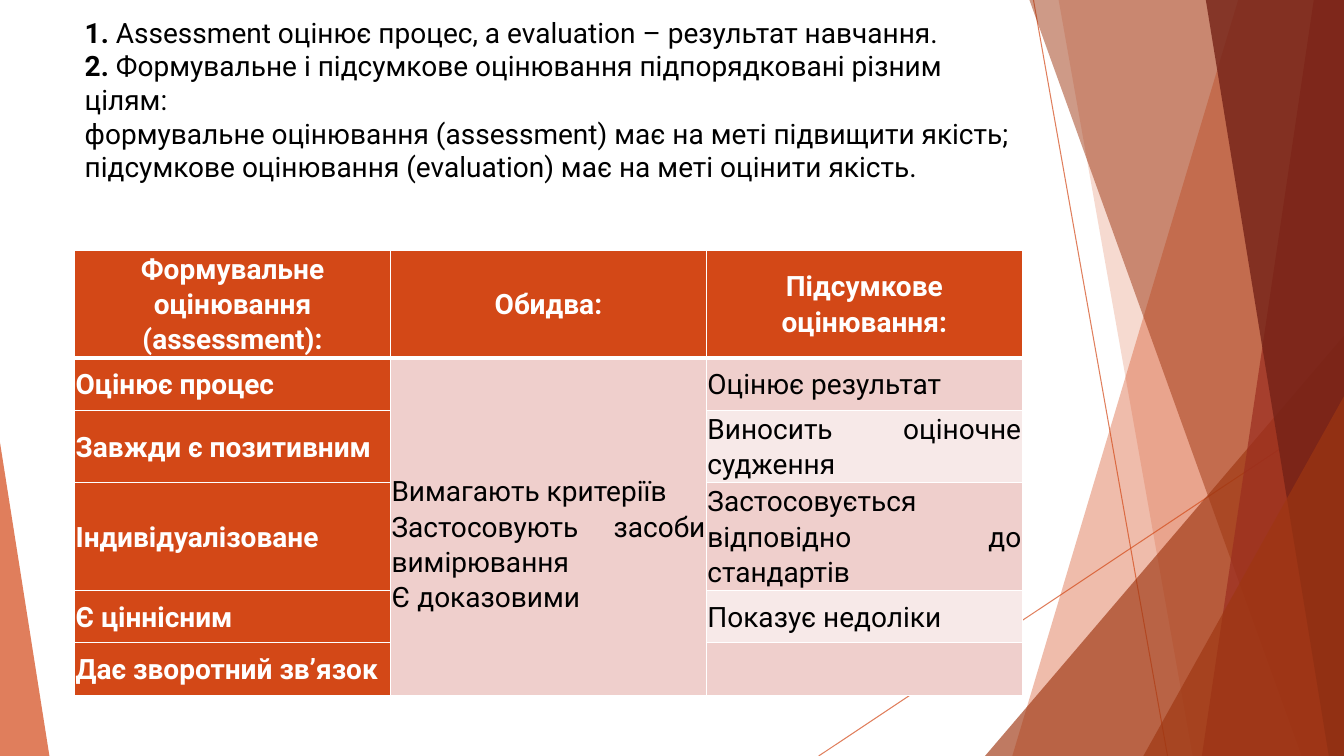
from lxml import etree
from pptx import Presentation
from pptx import util as u
from pptx.dml.color import RGBColor
from pptx.enum import shapes, text
from pptx.oxml.ns import qn

INK = {"rust": "D34817", "brown": "9E3611", "red": "9B2D1F", "wine": "742217",
       "pink": "EFCFCC", "pale": "F7E9E8", "white": "FFFFFF", "black": "000000"}
WIDE, HIGH = 13.33, 7.5


def tint(fill, ink, share):
    """Solid colour with an opacity in percent."""
    fill.solid()
    fill.fore_color.rgb = RGBColor.from_string(INK[ink])
    clr = fill._xPr.find(qn("a:solidFill"))[0]
    etree.SubElement(clr, qn("a:alpha"), val=str(share * 1000))


def write(para, words, ink, bold):
    run = para.add_run()
    run.text = words
    run.font.name, run.font.size, run.font.bold = "Roboto", u.Pt(20), bold
    run.font.color.rgb = RGBColor.from_string(INK[ink])


deck = Presentation()
deck.slide_width, deck.slide_height = u.Inches(WIDE), u.Inches(HIGH)
slide = deck.slides.add_slide(deck.slide_layouts[5])
parts = slide.shapes

# Thin crossing lines
for x1, y1, x2 in [(10.25, 0, 11.58), (WIDE, 4.03, 8.12)]:
    line = parts.add_connector(shapes.MSO_CONNECTOR.STRAIGHT, u.Inches(x1),
                               u.Inches(y1), u.Inches(x2), u.Inches(HIGH))
    line.line.width = u.Pt(0.75)
    tint(line.line.fill, "rust", 70)
    etree.SubElement(line._element.spPr, qn("a:effectLst"))

# Facets: bands (top x, foot x) run to the right edge,
# triangles (left, top, width, apex) stand on the bottom edge
facets = [
    ((12.28, 10.04), "rust", 36),
    ((10.5, 11.83), "rust", 20),
    ((9.77, 3.33, 3.56, 1), "brown", 66),
    ((10.21, 12.91), "brown", 50),
    ((13.03, 11.92), "red", 70),
    ((11.96, 13.18), "wine", 80),
    ((11.34, 3.93, 1.99, 1), "brown", 66),
    ((0, 4.39, 0.49, 0), "rust", 70),
]
for form, ink, share in facets:
    if len(form) == 2:
        top, foot = form
        pen = parts.build_freeform(u.Inches(top), 0)
        pen.add_line_segments([(u.Inches(x), u.Inches(y)) for x, y in
                               [(WIDE, 0), (WIDE, HIGH), (foot, HIGH)]])
        facet = pen.convert_to_shape()
    else:
        x, y, w, apex = form
        facet = parts.add_shape(shapes.MSO_SHAPE.ISOSCELES_TRIANGLE, u.Inches(x),
                                u.Inches(y), u.Inches(w), u.Inches(HIGH - y))
        facet.adjustments[0] = apex
    tint(facet.fill, ink, share)
    facet.line.fill.background()
    facet.shadow.inherit = False

# Title, in front of the facets
LEFT, SPAN = 0.74, 9.4
title = parts.title
parts._spTree.append(title._element)
title.left, title.top = u.Inches(LEFT), u.Inches(0.21)
title.width, title.height = u.Inches(SPAN), u.Inches(1.88)
frame = title.text_frame
frame.word_wrap, frame.auto_size = True, text.MSO_AUTO_SIZE.NONE
frame.vertical_anchor = text.MSO_ANCHOR.MIDDLE
frame.margin_bottom = u.Inches(0.38)
para = frame.paragraphs[0]
para.alignment, para.line_spacing = text.PP_ALIGN.LEFT, 1.0
points = [
    ("1. ", "Assessment оцінює процес, а evaluation – результат навчання."),
    ("2.", " Формувальне і підсумкове оцінювання підпорядковані різним цілям:"),
    ("", "формувальне оцінювання (assessment) має на меті підвищити якість;"),
    ("", "підсумкове оцінювання (evaluation) має на меті оцінити якість."),
]
for i, (mark, words) in enumerate(points):
    if i:
        para.add_line_break()
    if mark:
        write(para, mark, "black", True)
    write(para, words, "black", False)

# Comparison table
both = ["Вимагають критеріїв", "Застосовують засоби вимірювання", "Є доказовими"]
rows = [
    (1.02, ["Формувальне оцінювання (assessment):"], ["Обидва:"],
     ["Підсумкове оцінювання:"]),
    (0.52, ["Оцінює процес"], both, ["Оцінює результат"]),
    (0.52, ["Завжди є позитивним"], [], ["Виносить оціночне судження"]),
    (1.02, ["Індивідуалізоване"], [], ["Застосовується відповідно до стандартів"]),
    (0.52, ["Є ціннісним"], [], ["Показує недоліки"]),
    (0.52, ["Дає зворотний зв’язок"], [], []),
]
grid = parts.add_table(len(rows), 3, u.Inches(LEFT), u.Inches(2.48), u.Inches(SPAN),
                       u.Inches(sum(row[0] for row in rows))).table
grid.first_row = grid.horz_banding = False
for r, (tall, *cells) in enumerate(rows):
    grid.rows[r].height = u.Inches(tall)
    for c, lines in enumerate(cells):
        cell = grid.cell(r, c)
        head = r == 0 or c == 0
        cell.vertical_anchor = text.MSO_ANCHOR.MIDDLE
        cell.margin_left = cell.margin_right = u.Inches(0.01)
        cell.margin_top = cell.margin_bottom = u.Inches(0.01)

        # White rules, thicker under the header
        for side in "LRTB":
            thick = (side == "B" and r == 0) or (side == "T" and r == 1)
            rule = etree.SubElement(cell._tc.get_or_add_tcPr(), qn("a:ln" + side),
                                    w=str(u.Pt(3 if thick else 1)))
            solid = etree.SubElement(rule, qn("a:solidFill"))
            etree.SubElement(solid, qn("a:srgbClr"), val=INK["white"])

        shade = "rust" if head else "pink" if r % 2 or c == 1 else "pale"
        cell.fill.solid()
        cell.fill.fore_color.rgb = RGBColor.from_string(INK[shade])

        for i, words in enumerate(lines):
            body = cell.text_frame
            para = body.add_paragraph() if i else body.paragraphs[0]
            para.alignment = text.PP_ALIGN.JUSTIFY if r else text.PP_ALIGN.CENTER
            para.line_spacing = 1.07
            write(para, words, "white" if head else "black", head)

# The shared column is one tall cell, its text set a line lower
grid.cell(1, 1).merge(grid.cell(len(rows) - 1, 1))
grid.cell(1, 1).margin_top = u.Inches(0.36)

deck.save("out.pptx")
